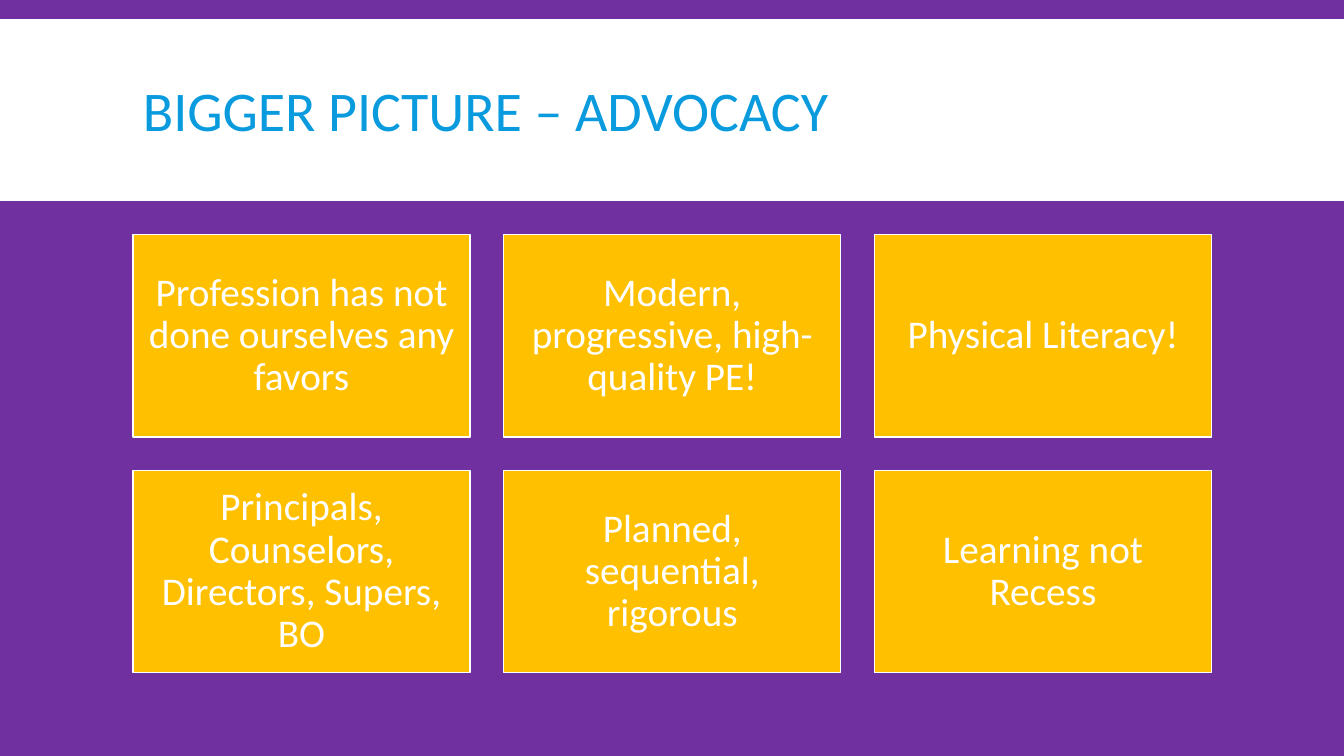
"""Build the advocacy slide: a title band above a grid of six cards."""
from pptx import Presentation
from pptx.dml.color import RGBColor
from pptx.enum.shapes import MSO_SHAPE as SHAPE
from pptx.enum.text import MSO_ANCHOR as ANCHOR, PP_ALIGN as ALIGN
from pptx.util import Pt

TITLE = "BIGGER PICTURE – ADVOCACY"
CARDS = [
    ["Profession has not done ourselves any favors",
     "Modern, progressive, high-quality PE!",
     "Physical Literacy!"],
    ["Principals, Counselors, Directors, Supers, BO",
     "Planned, sequential, rigorous",
     "Learning not Recess"],
]
FONT = "Calibri"
PURPLE, WHITE, GOLD, BLUE = "7030A0", "FFFFFF", "FFC000", "099BDD"
SLIDE_W, SLIDE_H = 960, 540
LEFT, TOP = 95, 167.6
CARD_W, CARD_H, GAP = 240.75, 144.45, 24.05
CARD_INSET = 8.4


def color(target, value):
    target.rgb = RGBColor.from_string(value)


def add_box(slide, left, top, width, height, fill):
    s = slide.shapes.add_shape(SHAPE.RECTANGLE, Pt(left), Pt(top), Pt(width), Pt(height))
    s.shadow.inherit = False
    s.fill.solid()
    color(s.fill.fore_color, fill)
    s.line.fill.background()
    return s


def write(shape, text, size, fill, align, spacing):
    tf = shape.text_frame
    tf.text = text
    tf.word_wrap = True
    tf.vertical_anchor = ANCHOR.MIDDLE
    p = tf.paragraphs[0]
    p.alignment = align
    p.line_spacing = spacing
    r = p.runs[0]
    r.font.name = FONT
    r.font.size = Pt(size)
    color(r.font.color, fill)


def add_card(slide, row, col, text):
    left = LEFT + col * (CARD_W + GAP)
    top = TOP + row * (CARD_H + GAP)
    s = add_box(slide, left, top, CARD_W, CARD_H, GOLD)
    color(s.line.color, WHITE)
    s.line.width = Pt(1)
    write(s, text, 28, WHITE, ALIGN.CENTER, 0.9)
    tf = s.text_frame
    tf.margin_left = tf.margin_right = tf.margin_top = tf.margin_bottom = Pt(CARD_INSET)


def main():
    prs = Presentation()
    prs.slide_width, prs.slide_height = Pt(SLIDE_W), Pt(SLIDE_H)
    slide = prs.slides.add_slide(prs.slide_layouts[6])
    slide.background.fill.solid()
    color(slide.background.fill.fore_color, PURPLE)

    add_box(slide, 0, 13.7, SLIDE_W, 129.8, WHITE)
    title = slide.shapes.add_textbox(Pt(LEFT), Pt(22.3), Pt(770.4), Pt(118.8))
    write(title, TITLE, 40, BLUE, ALIGN.LEFT, 0.85)

    for row, texts in enumerate(CARDS):
        for col, text in enumerate(texts):
            add_card(slide, row, col, text)
    prs.save("out.pptx")


if __name__ == "__main__":
    main()
